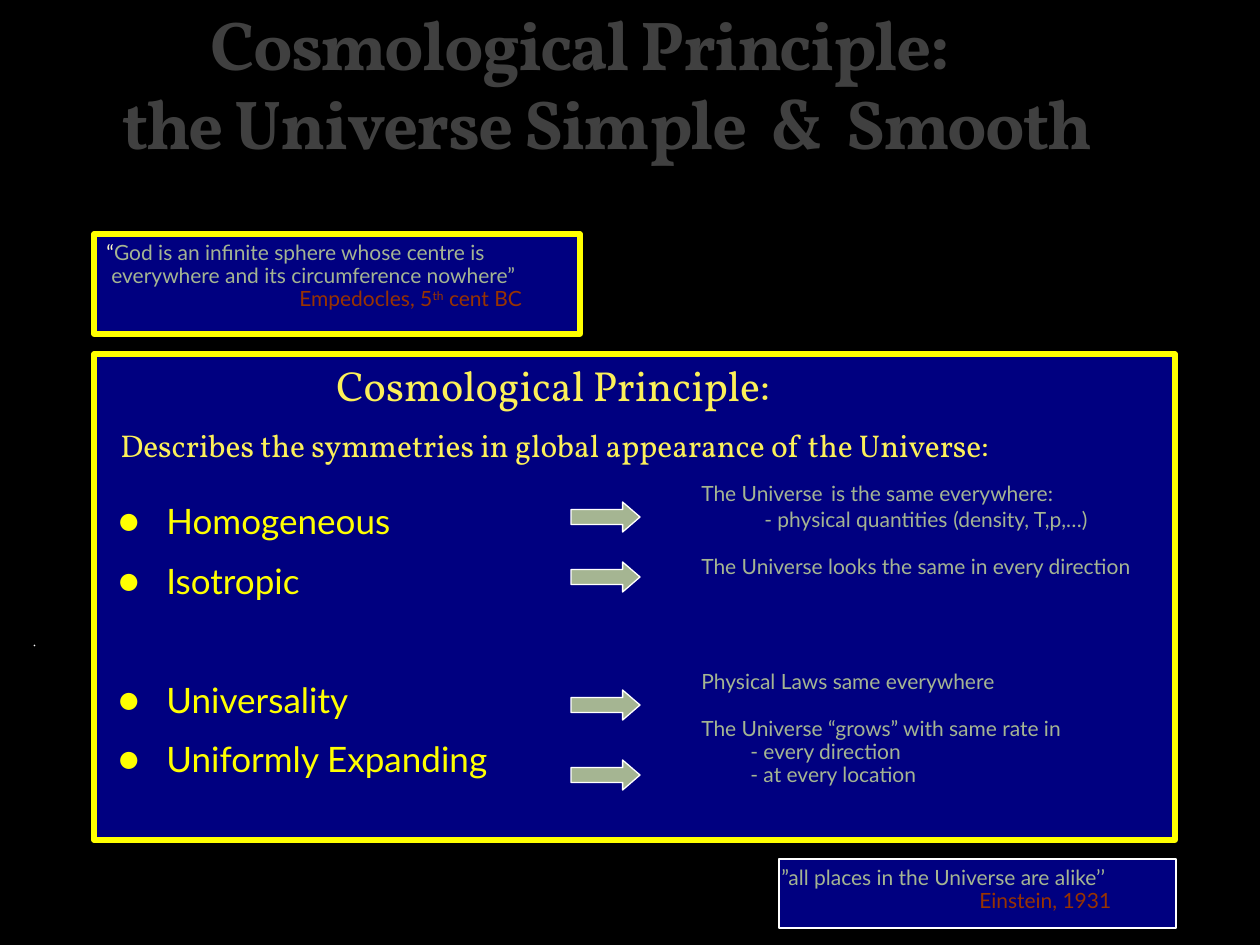
from dataclasses import dataclass

import pptx
import pptx.dml.color
import pptx.enum.shapes
import pptx.oxml
import pptx.oxml.ns
import pptx.util

SCALE = 914400 / 126
GREEN, RUST, YELLOW, GOLD = "A5B592", "993300", "FFFF00", "FCF059"
CREAM, NAVY, WHITE, GREY = "FEFAC9", "000080", "FFFFFF", "404040"
KIND = pptx.enum.shapes.MSO_SHAPE


@dataclass
class Run:
    text: str
    color: str = GREEN
    size: float = 12
    font: str = "Lato"
    bold: bool = False
    space: int = 0
    raised: int = 0


@dataclass
class Para:
    runs: list[Run]
    pitch: int = 23
    gap: int = 0
    left: int = 0
    hang: int = 0
    stops: tuple[int, ...] = ()


@dataclass
class Block:
    x: int
    y: int
    w: int
    h: int
    paras: list[Para]


@dataclass
class Panel:
    x: int
    y: int
    w: int
    h: int
    line: str
    width: float


def px(count: int) -> pptx.util.Emu:
    return pptx.util.Emu(round(count * SCALE))


def rgb(code: str) -> pptx.dml.color.RGBColor:
    return pptx.dml.color.RGBColor.from_string(code)


def draw_shape(slide, kind, panel: Panel, fill: str):
    shape = slide.shapes.add_shape(kind, px(panel.x), px(panel.y), px(panel.w), px(panel.h))
    shape.shadow.inherit = False
    shape.fill.solid()
    shape.fill.fore_color.rgb = rgb(fill)
    shape.line.color.rgb = rgb(panel.line)
    shape.line.width = pptx.util.Pt(panel.width)
    return shape


def draw_run(para, item: Run) -> None:
    run = para.add_run()
    run.text = item.text
    run.font.name = item.font
    run.font.size = pptx.util.Pt(item.size)
    run.font.bold = item.bold
    run.font.color.rgb = rgb(item.color)
    props = run.font._element
    if item.space:
        props.set("spc", str(item.space * 100))
    if item.raised:
        props.set("baseline", str(item.raised * 1000))


def add_part(parent, tag: str, **values):
    part = pptx.oxml.parse_xml(f"<{tag} {pptx.oxml.ns.nsdecls('a')}/>")
    for name, value in values.items():
        part.set(name, str(value))
    parent.append(part)
    return part


def draw_para(para, item: Para) -> None:
    para.line_spacing = px(item.pitch)
    para.space_before = px(item.gap)
    props = para._p.get_or_add_pPr()
    props.set("marL", str(px(item.left)))
    props.set("indent", str(px(-item.hang)))
    if item.hang:
        add_part(props, "a:buFont", typeface="Lato")
        add_part(props, "a:buChar", char="●")
    else:
        add_part(props, "a:buNone")
    if item.stops:
        tabs = add_part(props, "a:tabLst")
        for stop in item.stops:
            add_part(tabs, "a:tab", pos=px(stop), algn="l")
    for run in item.runs:
        draw_run(para, run)


def draw_block(slide, block: Block) -> None:
    box = slide.shapes.add_textbox(px(block.x), px(block.y), px(block.w), px(block.h))
    frame = box.text_frame
    frame.word_wrap = True
    frame.margin_top = frame.margin_bottom = 0
    for i, item in enumerate(block.paras):
        draw_para(frame.add_paragraph() if i else frame.paragraphs[0], item)


def draw_dot(slide, x: int, y: int) -> None:
    line = slide.shapes.add_connector(
        pptx.enum.shapes.MSO_CONNECTOR.STRAIGHT, px(x), px(y), px(x + 1), px(y + 1))
    line.line.color.rgb = rgb(WHITE)
    line.line.width = pptx.util.Pt(0.75)
    add_part(line._element.spPr, "a:effectLst")


def title(text: str, left: int) -> Para:
    return Para([Run(text, GREY, 39.6, "Vollkorn", True, -1)], 79, left=left)


def head(text: str, size: int, pitch: int, gap: int, left: int) -> Para:
    return Para([Run(text, GOLD, size, "Vollkorn")], pitch, gap, left)


def point(text: str, gap: int) -> Para:
    return Para([Run(text, YELLOW, 20)], 42, gap, 48, 48)


def note(text: str, gap: int = 0, left: int = 0, stops: tuple[int, ...] = ()) -> Para:
    return Para([Run(text)], gap=gap, left=left, stops=stops)


PANELS = [
    Panel(94, 354, 1081, 486, YELLOW, 3),
    Panel(779, 859, 397, 69, WHITE, 0.75),
    Panel(94, 234, 486, 100, YELLOW, 3),
]

BLOCKS = [
    Block(0, 5, 1260, 164, [
        title("Cosmological Principle:", 198),
        title("the Universe Simple  &  Smooth", 110),
    ]),
    Block(94, 242, 556, 76, [
        Para([Run("“", CREAM), Run("God is an infinite sphere whose centre is")]),
        note("everywhere and its circumference nowhere”", left=5),
        Para([Run("Empedocles, 5", RUST), Run("th", RUST, raised=30),
              Run(" cent BC", RUST)], left=193),
    ]),
    Block(769, 867, 427, 50, [
        note("”all places in the Universe are alike’’"),
        Para([Run("Einstein, 1931", RUST)], left=198),
    ]),
    Block(106, 499, 440, 306, [
        point("Homogeneous", 0),
        point("Isotropic", 18),
        point("Universality", 77),
        point("Uniformly Expanding", 17),
    ]),
    Block(44, 360, 1131, 114, [
        head("Cosmological Principle:", 24, 50, 0, 280),
        head("Describes the symmetries in global appearance of the Universe:", 18, 38, 16, 64),
    ]),
    Block(689, 485, 476, 336, [
        Para([Run("The Universe"), Run(" ", size=18), Run("is the same everywhere:")]),
        note("\t- physical quantities\t(density, T,p,…)", 1, stops=(43, 252)),
        note("The Universe looks the same in every direction", 24),
        note("Physical Laws same everywhere", 92),
        note("The Universe “grows” with same rate in", 24),
        note("- every direction", left=49),
        note("- at every location", left=49),
    ]),
]


def main() -> None:
    deck = pptx.Presentation()
    deck.slide_width, deck.slide_height = px(1260), px(945)
    slide = deck.slides.add_slide(deck.slide_layouts[6])
    slide.background.fill.solid()
    slide.background.fill.fore_color.rgb = rgb("000000")
    for panel in PANELS:
        draw_shape(slide, KIND.RECTANGLE, panel, NAVY)
    for block in BLOCKS:
        draw_block(slide, block)
    draw_dot(slide, 34, 645)
    for y in (502, 562, 690, 760):
        arrow = draw_shape(slide, KIND.RIGHT_ARROW, Panel(571, y, 69, 30, WHITE, 0.75), GREEN)
        arrow.adjustments[0], arrow.adjustments[1] = 0.5, 0.58
    deck.save("out.pptx")


if __name__ == "__main__":
    main()
